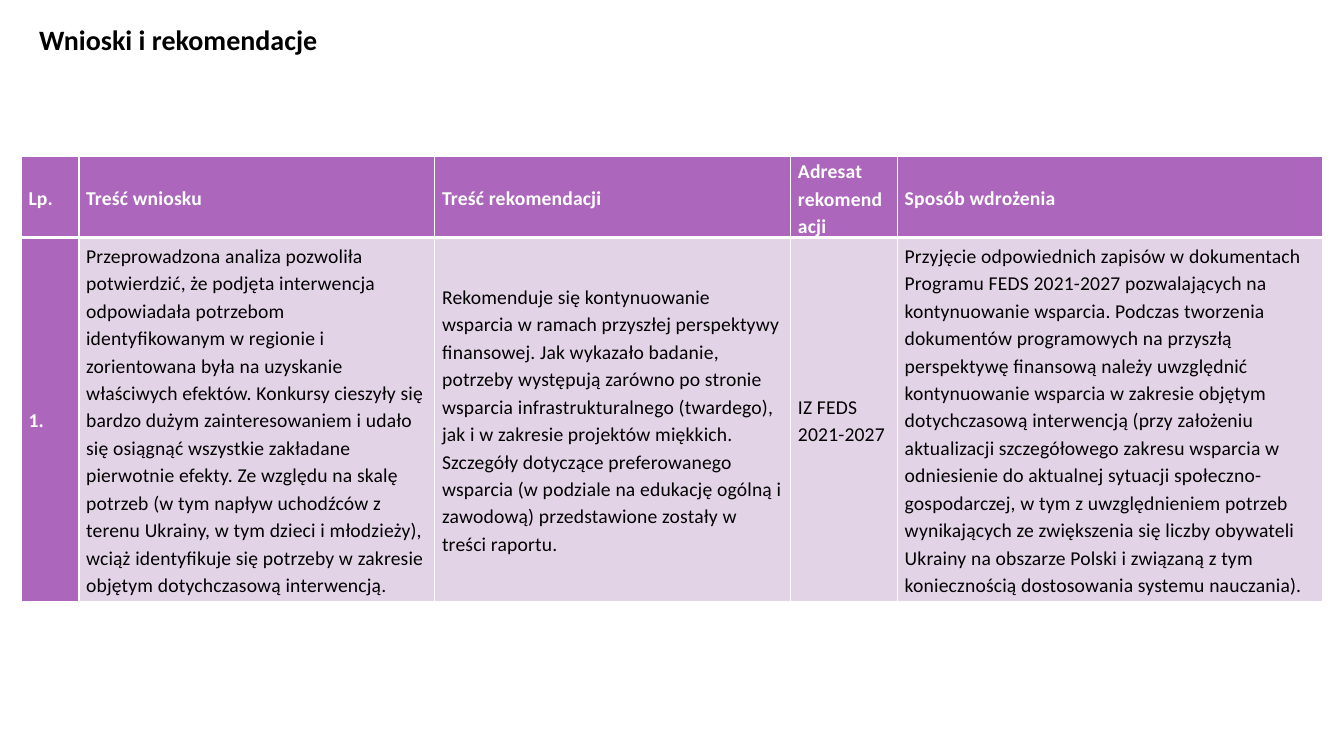
import pptx
import pptx.dml.color
import pptx.enum.text
import pptx.oxml.ns
import pptx.util
from lxml import etree

Cm, Pt = pptx.util.Cm, pptx.util.Pt
PURPLE, LILAC, WHITE, BLACK = "AC66BB", "E3D3E7", "FFFFFF", "000000"
COLUMN_WIDTHS = (1.45, 8.97, 8.97, 2.69, 10.72)
ROW_HEIGHTS = (1.37, 9.17)
HEADINGS = ("Lp.", "Treść wniosku", "Treść rekomendacji",
            "Adresat rekomendacji", "Sposób wdrożenia")
RECOMMENDATION = (
    "1.",
    "Przeprowadzona analiza pozwoliła potwierdzić, że podjęta interwencja "
    "odpowiadała potrzebom identyfikowanym w regionie i zorientowana była na "
    "uzyskanie właściwych efektów. Konkursy cieszyły się bardzo dużym "
    "zainteresowaniem i udało się osiągnąć wszystkie zakładane pierwotnie efekty. "
    "Ze względu na skalę potrzeb (w tym napływ uchodźców z terenu Ukrainy, w tym "
    "dzieci i młodzieży), wciąż identyfikuje się potrzeby w zakresie objętym "
    "dotychczasową interwencją.",
    "Rekomenduje się kontynuowanie wsparcia w ramach przyszłej perspektywy "
    "finansowej. Jak wykazało badanie, potrzeby występują zarówno po stronie "
    "wsparcia infrastrukturalnego (twardego), jak i w zakresie projektów miękkich. "
    "Szczegóły dotyczące preferowanego wsparcia (w podziale na edukację ogólną i "
    "zawodową) przedstawione zostały w treści raportu.",
    "IZ FEDS 2021-2027",
    "Przyjęcie odpowiednich zapisów w dokumentach Programu FEDS 2021-2027 "
    "pozwalających na kontynuowanie wsparcia. Podczas tworzenia dokumentów "
    "programowych na przyszłą perspektywę finansową należy uwzględnić "
    "kontynuowanie wsparcia w zakresie objętym dotychczasową interwencją (przy "
    "założeniu aktualizacji szczegółowego zakresu wsparcia w odniesienie do "
    "aktualnej sytuacji społeczno-gospodarczej, w tym z uwzględnieniem potrzeb "
    "wynikających ze zwiększenia się liczby obywateli Ukrainy na obszarze Polski i "
    "związaną z tym koniecznością dostosowania systemu nauczania).",
)


def rgb(value):
    return pptx.dml.color.RGBColor.from_string(value)


def write(frame, text, size, color=BLACK, bold=False, line=1.0, before=0, after=0,
          tracking=0):
    """Fill a text frame with one paragraph; tracking is in points."""
    paragraph = frame.paragraphs[0]
    paragraph.line_spacing = line
    paragraph.space_before, paragraph.space_after = Pt(before), Pt(after)
    run = paragraph.add_run()
    run.text = text
    run.font.name, run.font.size, run.font.bold = "Calibri", Pt(size), bold
    run.font.color.rgb = rgb(color)
    if tracking:
        run.font._element.set("spc", str(round(tracking * 100)))


def set_borders(cell, **widths):
    """Draw white borders; widths in points are keyed L, R, T and B."""
    qn = pptx.oxml.ns.qn
    properties = cell._tc.get_or_add_tcPr()
    for side, width in widths.items():
        border = etree.SubElement(properties, qn(f"a:ln{side}"), w=str(Pt(width)))
        fill = etree.SubElement(border, qn("a:solidFill"))
        etree.SubElement(fill, qn("a:srgbClr"), val=WHITE)


def add_title(slide, left, top, width, height):
    title = slide.shapes.add_textbox(Cm(left), Cm(top), Cm(width), Cm(height))
    frame = title.text_frame
    frame.word_wrap = True
    frame.vertical_anchor = pptx.enum.text.MSO_ANCHOR.MIDDLE
    write(frame, "Wnioski i rekomendacje", 20, bold=True, line=0.9)


def add_recommendations(slide, left, top, width, height):
    rows = (HEADINGS, RECOMMENDATION)
    table = slide.shapes.add_table(len(rows), len(HEADINGS), Cm(left), Cm(top),
                                   Cm(width), Cm(height)).table
    for column, share in zip(table.columns, COLUMN_WIDTHS):
        column.width = Cm(width * share / sum(COLUMN_WIDTHS))
    for r, texts in enumerate(rows):
        table.rows[r].height = Cm(ROW_HEIGHTS[r])
        for c, text in enumerate(texts):
            cell = table.cell(r, c)
            is_heading = r == 0 or c == 0
            cell.margin_left = cell.margin_right = Cm(0.18)
            cell.margin_top = cell.margin_bottom = 0
            cell.vertical_anchor = pptx.enum.text.MSO_ANCHOR.MIDDLE
            set_borders(cell, L=1, R=1, T=3 if r else 1, B=1 if r else 3)
            cell.fill.solid()
            cell.fill.fore_color.rgb = rgb(PURPLE if is_heading else LILAC)
            write(cell.text_frame, text, 14, color=WHITE if is_heading else BLACK,
                  bold=is_heading, line=1.15, before=6, after=6, tracking=0.1)


def main():
    deck = pptx.Presentation()
    deck.slide_width, deck.slide_height = Cm(33.87), Cm(19.05)
    slide = deck.slides.add_slide(deck.slide_layouts[6])
    add_title(slide, 0.74, 0.23, 29.21, 1.65)
    add_recommendations(slide, 0.54, 3.94, sum(COLUMN_WIDTHS), sum(ROW_HEIGHTS))
    deck.save("out.pptx")


if __name__ == "__main__":
    main()
